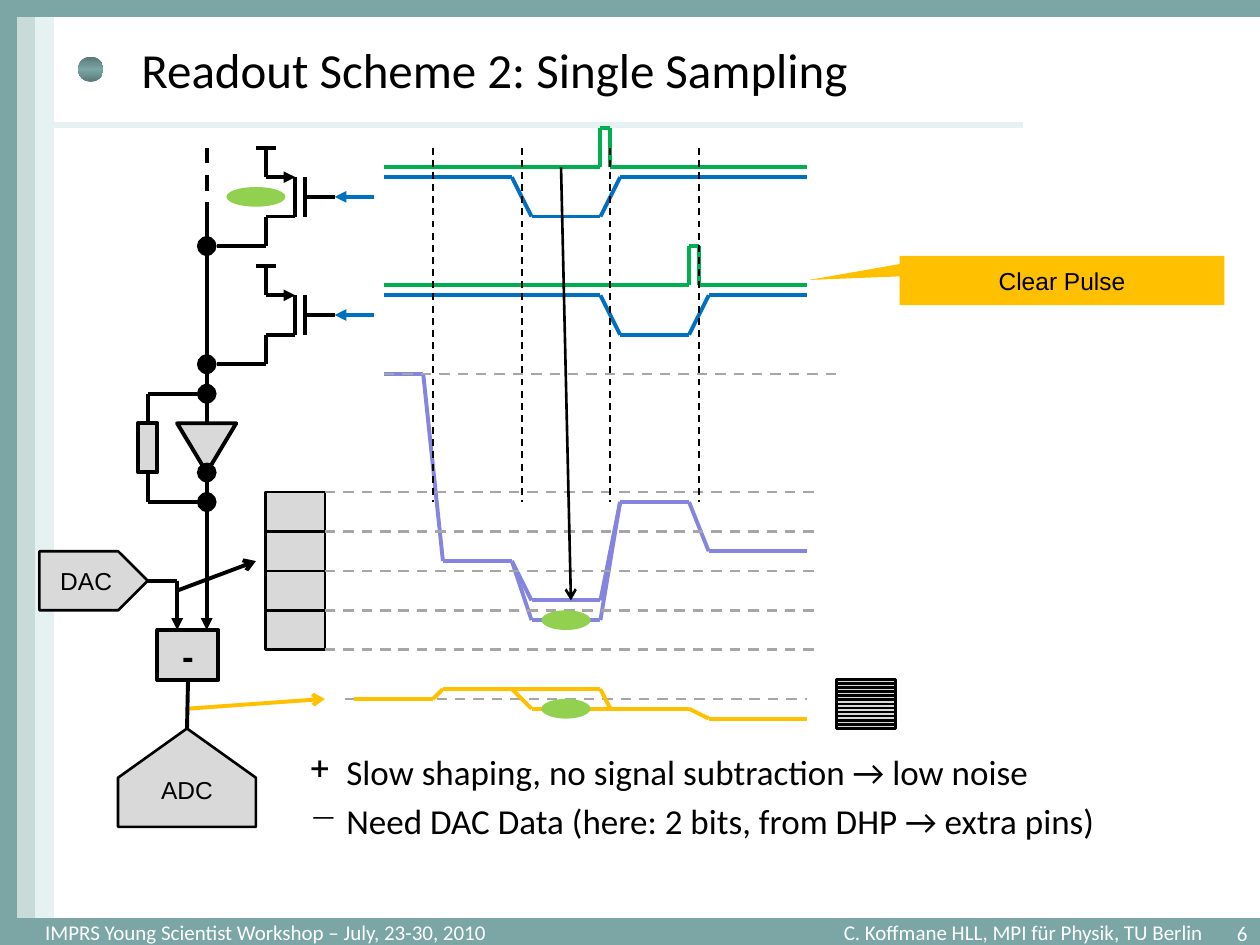
"""Build the slide on the single sampling readout scheme."""
from copy import deepcopy
from dataclasses import dataclass
from itertools import pairwise

from pptx import Presentation
from pptx import util as u
from pptx.dml.color import RGBColor
from pptx.enum import dml, shapes, text
from pptx.oxml.ns import qn

SHAPE = shapes.MSO_SHAPE
ALIGN = text.PP_ALIGN


@dataclass(frozen=True)
class Theme:
    black: str = "000000"
    white: str = "FFFFFF"
    block: str = "D9D9D9"
    guide: str = "A6A6A6"
    gate: str = "0070C0"
    clear: str = "00B050"
    output: str = "8585E0"
    sampled: str = "FFC000"
    signal: str = "92D050"
    frame: str = "7CA6A6"
    frame_dark: str = "597777"
    frame_mid: str = "C9DBD8"
    frame_pale: str = "E6F2F2"
    body_font: str = "Calibri"
    label_font: str = "Arial"
    title_size: int = 28
    body_size: int = 20
    label_size: int = 14
    footer_size: int = 12
    thick: float = 2.25
    medium: float = 1.5
    thin: float = 1


def grid(units):
    return u.Cm(units * 25.4 / 128)


def add_xml(parent, tag, **attributes):
    element = parent.makeelement(qn(tag), attributes)
    parent.append(element)
    return element


class SlideBuilder:
    def __init__(self, slide, theme):
        self.slide = slide
        self.theme = theme

    def format(self, paragraph, size, font=None, color=None, align=None, bold=None):
        paragraph.alignment = align
        paragraph.font.size = u.Pt(size)
        paragraph.font.name = font or self.theme.body_font
        paragraph.font.bold = bold
        paragraph.font.color.rgb = RGBColor.from_string(color or self.theme.black)

    def frame_text(self, shape, margins=(0, 0, 0, 0), anchor=text.MSO_ANCHOR.MIDDLE):
        frame = shape.text_frame
        frame.word_wrap = True
        frame.vertical_anchor = anchor
        frame.margin_left, frame.margin_top, frame.margin_right, frame.margin_bottom = map(u.Cm, margins)
        return frame

    def title(self, words, box):
        title = self.slide.shapes.title
        title.left, title.top, title.width, title.height = map(grid, box)
        frame = self.frame_text(title, (1.78, 0.13, 0.25, 0.13))
        frame.text = words
        self.format(frame.paragraphs[0], self.theme.title_size, align=ALIGN.LEFT)

    def text_box(self, box, margins, anchor):
        shape = self.slide.shapes.add_textbox(*map(grid, box))
        return self.frame_text(shape, margins, anchor)

    def footer(self, left, right, box, tab):
        frame = self.text_box(box, (0, 0, 0, 0), text.MSO_ANCHOR.MIDDLE)
        paragraph = frame.paragraphs[0]
        paragraph.text = f"{left}\t{right}"
        tabs = add_xml(paragraph._p.get_or_add_pPr(), "a:tabLst")
        add_xml(tabs, "a:tab", pos=str(grid(tab)), algn="r")
        self.format(paragraph, self.theme.footer_size, color=self.theme.white)

    def page_number(self, words, box):
        frame = self.text_box(box, (0.25, 0.13, 0.25, 0.13), text.MSO_ANCHOR.TOP)
        frame.text = words
        self.format(frame.paragraphs[0], self.theme.footer_size, color=self.theme.white, align=ALIGN.RIGHT)

    def bullets(self, items, box):
        frame = self.text_box(box, (0.25, 0.13, 0.25, 0.13), text.MSO_ANCHOR.TOP)
        for index, (mark, words) in enumerate(items):
            paragraph = frame.add_paragraph() if index else frame.paragraphs[0]
            paragraph.text = words
            properties = paragraph._p.get_or_add_pPr()
            properties.set("marL", str(u.Cm(0.74)))
            properties.set("indent", str(u.Cm(-0.74)))
            add_xml(properties, "a:buChar", char=mark)
            if index:
                paragraph.space_before = u.Pt(4)
            self.format(paragraph, self.theme.body_size)

    def shape(self, kind, box, fill, line=None, width=None, rotation=0):
        shape = self.slide.shapes.add_shape(kind, *map(grid, box))
        shape.shadow.inherit = False
        shape.rotation = rotation
        shape.fill.solid()
        shape.fill.fore_color.rgb = RGBColor.from_string(fill)
        if line:
            shape.line.color.rgb = RGBColor.from_string(line)
            shape.line.width = u.Pt(width)
        else:
            shape.line.fill.background()
        return shape

    def block(self, kind, box, width=None, rotation=0):
        width = width or self.theme.medium
        return self.shape(kind, box, self.theme.block, self.theme.black, width, rotation)

    def label(self, shape, words, size=None, bold=None):
        frame = self.frame_text(shape)
        frame.text = words
        self.format(frame.paragraphs[0], size or self.theme.label_size,
                    self.theme.label_font, align=ALIGN.CENTER, bold=bold)

    def title_mark(self, box):
        fill = self.shape(SHAPE.OVAL, box, self.theme.frame).fill
        fill.gradient()
        fill.gradient_angle = 90
        first = fill._fill._gradFill.gsLst[0]
        first.addnext(deepcopy(first))
        colors = (self.theme.frame_dark, self.theme.frame, self.theme.frame_dark)
        for stop, position, color in zip(fill.gradient_stops, (0, 0.5, 1), colors):
            stop.position = position
            stop.color.rgb = RGBColor.from_string(color)

    def dot(self, x, y):
        self.shape(SHAPE.OVAL, (x - 1, y - 1, 2, 2), self.theme.black)

    def trace(self, *points, color=None, width=None, dash=False, arrow=None):
        connectors = []
        for start, end in pairwise(points):
            connector = self.slide.shapes.add_connector(
                shapes.MSO_CONNECTOR.STRAIGHT, *map(grid, start + end))
            connector.line.color.rgb = RGBColor.from_string(color or self.theme.black)
            connector.line.width = u.Pt(width or self.theme.thick)
            if dash:
                connector.line.dash_style = dml.MSO_LINE.DASH
            add_xml(connector._element.spPr, "a:effectLst")
            connectors.append(connector)
        if arrow:
            add_xml(connectors[-1].line._get_or_add_ln(), "a:tailEnd", type=arrow)
        return connectors

    def guide(self, start, end):
        self.trace(start, end, color=self.theme.guide, width=self.theme.medium, dash=True)

    def pixel(self, top, fall, rise):
        theme = self.theme
        self.trace((26, top), (28, top))
        self.trace((27, top), (27, top + 3), (30, top + 3), arrow="triangle")
        self.trace((30, top + 3), (30, top + 7), (27, top + 7), (27, top + 10), (22, top + 10))
        self.trace((31, top + 3), (31, top + 7))
        self.trace((31, top + 5), (34, top + 5))
        self.dot(21, top + 10)
        self.trace((38, top + 5), (34, top + 5), color=theme.gate, arrow="triangle")
        self.trace((39, top + 3), (fall, top + 3), (fall + 2, top + 7), (rise, top + 7),
                   (rise + 2, top + 3), (82, top + 3), color=theme.gate)
        self.trace((39, top + 2), (rise, top + 2), (rise, top - 2), (rise + 1, top - 2),
                   (rise + 1, top + 2), (82, top + 2), color=theme.clear)


def draw_frame(builder):
    theme = builder.theme
    for color, box in ((theme.frame_mid, (1.66, 0, 1.92, 93.3)), (theme.frame_pale, (3.6, 0, 1.8, 96)),
                       (theme.frame, (0, 93.3, 128, 2.7)), (theme.frame, (0, 0, 1.66, 93.3)),
                       (theme.frame, (0, 0, 128, 1.66))):
        builder.shape(SHAPE.RECTANGLE, box, color, color, 0.75)
    builder.trace((4.1, 12.7), (103.9, 12.7), color=theme.frame_pale, width=3)
    builder.title_mark((7.94, 5.76, 2.56, 2.56))
    builder.title("Readout Scheme 2: Single Sampling", (5.4, 2.7, 108.8, 8.6))
    builder.page_number("6", (115.2, 92.9, 12.8, 3.1))
    builder.footer("IMPRS Young Scientist Workshop – July, 23-30, 2010",
                   "C. Koffmane HLL, MPI für Physik, TU Berlin", (4.6, 93.4, 119, 2.6), 117.6)


def draw_circuit(builder):
    theme = builder.theme
    builder.trace((21, 15), (21, 22), dash=True)
    builder.trace((21, 21), (21, 43))
    builder.trace((21, 38), (21, 64), arrow="triangle")
    resistor = builder.block(SHAPE.RECTANGLE, (14, 43, 2, 5), theme.thick)
    builder.trace((21, 40), (15, 40), (15, 43))[-1].end_connect(resistor, 0)
    builder.trace((15, 48), (15, 51), (21, 51))[0].begin_connect(resistor, 2)
    builder.block(SHAPE.ISOSCELES_TRIANGLE, (18, 43, 6, 5), theme.thick, 180)
    for y in (40, 48, 51):
        builder.dot(21, y)
    builder.trace((13, 59), (18, 59), (18, 64), arrow="triangle")
    builder.trace((18, 60), (26, 57), arrow="arrow")
    builder.trace((19, 72), (33, 71), color=theme.sampled, arrow="arrow")
    subtractor = builder.block(SHAPE.RECTANGLE, (16, 64, 6.2, 5.1), theme.thick)
    builder.label(subtractor, "-", theme.body_size, True)
    builder.trace((19.1, 69.1), (19, 74))[0].begin_connect(subtractor, 2)
    adc = builder.block(SHAPE.PENTAGON, (14, 72, 10, 14), rotation=270)
    builder.label(adc, "ADC")
    adc.text_frame._txBody.bodyPr.set("vert", "vert")
    builder.label(builder.block(SHAPE.PENTAGON, (4, 56, 11, 6)), "DAC")
    for row in range(4):
        builder.block(SHAPE.RECTANGLE, (27, 50 + 4 * row, 6, 4))
    for row in range(12):
        builder.block(SHAPE.RECTANGLE, (85, 69 + row * 5 / 12, 6, 5 / 12))


def draw_signals(builder):
    theme = builder.theme
    builder.guide((35, 71), (82, 71))
    for top, fall, rise in ((15, 52, 61), (27, 61, 70)):
        builder.pixel(top, fall, rise)
    builder.trace((39, 38), (43, 38), (45, 57), (52, 57), (54, 61), (61, 61), (63, 51),
                  (70, 51), (72, 56), (82, 56), color=theme.output)
    builder.trace((52, 57), (54, 63), (61, 63), (63, 51), color=theme.output)
    builder.guide((39, 38), (85, 38))
    for y in range(50, 67, 4):
        builder.guide((33, y), (83, y))
    for x in range(44, 72, 9):
        builder.trace((x, 15), (x, 51), width=theme.thin, dash=True)
    builder.trace((57, 17), (58, 61), width=theme.medium, arrow="arrow")
    builder.trace((36, 71), (44, 71), (45, 70), (61, 70), (62, 72), color=theme.sampled)
    builder.trace((52, 70), (54, 72), (70, 72), (72, 73), (82, 73), color=theme.sampled)
    for box in ((23, 19, 6, 2), (55, 62, 5, 2), (55, 71, 5, 2)):
        builder.shape(SHAPE.OVAL, box, theme.signal)
    callout = builder.shape(SHAPE.RECTANGULAR_CALLOUT, (91.4, 26, 33, 5), theme.sampled)
    callout.adjustments[0], callout.adjustments[1] = -0.78, -0.01
    builder.label(callout, "Clear Pulse")


def main():
    presentation = Presentation()
    presentation.slide_width, presentation.slide_height = u.Cm(25.4), u.Cm(19.05)
    slide = presentation.slides.add_slide(presentation.slide_layouts.get_by_name("Title Only"))
    builder = SlideBuilder(slide, Theme())
    draw_frame(builder)
    draw_circuit(builder)
    draw_signals(builder)
    builder.bullets((("+", "Slow shaping, no signal subtraction → low noise"),
                     ("−", "Need DAC Data (here: 2 bits, from DHP → extra pins)")), (30.2, 75.6, 95, 13))
    presentation.save("out.pptx")


if __name__ == "__main__":
    main()
